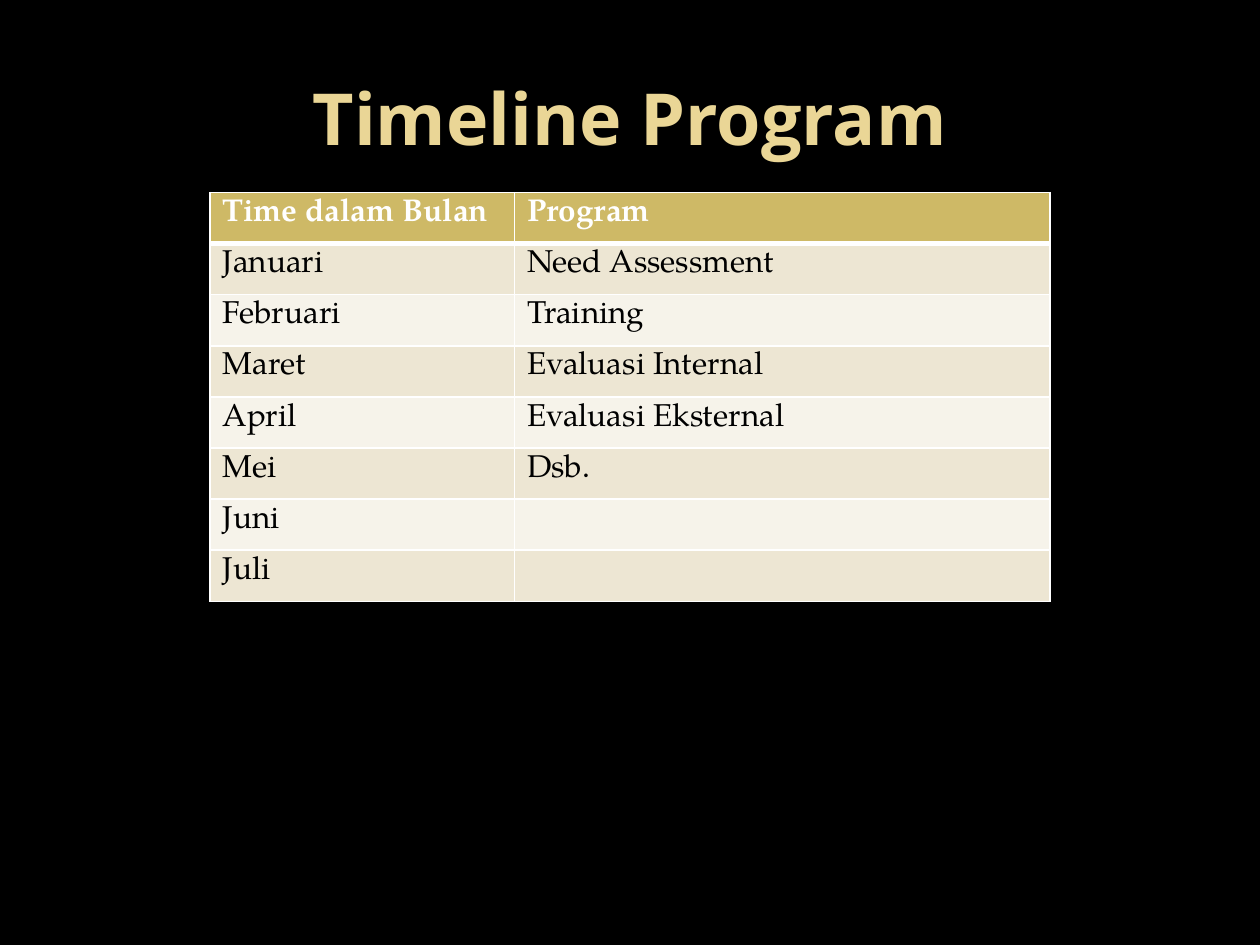
from lxml.etree import SubElement
from pptx import Presentation
from pptx.dml.color import RGBColor
from pptx.enum.text import MSO_ANCHOR as Anchor, PP_ALIGN as Align
from pptx.oxml.ns import qn
from pptx.util import Pt

COLORS = {
    "background": "000000",
    "title": "EAD696",
    "header": "CEB966",
    "odd_row": "EDE6D3",
    "even_row": "F6F3EA",
    "border": "FFFFFF",
    "header_text": "FFFFFF",
    "body_text": "000000",
}
TITLE_FONT = "Open Sans"
TABLE_FONT = "TeX Gyre Pagella"
COLUMN_WIDTHS = (174, 306)
SCHEDULE = (
    ("Time dalam Bulan", "Program"),
    ("Januari", "Need Assessment"),
    ("Februari", "Training"),
    ("Maret", "Evaluasi Internal"),
    ("April", "Evaluasi Eksternal"),
    ("Mei", "Dsb."),
    ("Juni", ""),
    ("Juli", ""),
)


def color(name):
    return RGBColor.from_string(COLORS[name])


def add_run(paragraph, text, font, size, color_name, bold=False):
    run = paragraph.add_run()
    run.text = text
    run.font.name = font
    run.font.size = Pt(size)
    run.font.bold = bold
    run.font.color.rgb = color(color_name)


def set_borders(cell, top, bottom):
    properties = cell._tc.get_or_add_tcPr()
    for side, width in (("L", 1), ("R", 1), ("T", top), ("B", bottom)):
        line = SubElement(properties, qn(f"a:ln{side}"), w=str(Pt(width)))
        fill = SubElement(line, qn("a:solidFill"))
        SubElement(fill, qn("a:srgbClr"), val=COLORS["border"])


def add_title(slide, left, top, width, height):
    shape = slide.shapes.add_textbox(Pt(left), Pt(top), Pt(width), Pt(height))
    frame = shape.text_frame
    frame.word_wrap = True
    frame.vertical_anchor = Anchor.MIDDLE
    paragraph = frame.paragraphs[0]
    paragraph.alignment = Align.CENTER
    add_run(paragraph, "Timeline Program", TITLE_FONT, 41, "title", True)


def add_schedule(slide, left, top, width, height):
    shape = slide.shapes.add_table(
        len(SCHEDULE), len(COLUMN_WIDTHS), Pt(left), Pt(top), Pt(width), Pt(height)
    )
    table = shape.table
    for column, column_width in zip(table.columns, COLUMN_WIDTHS):
        column.width = Pt(column_width)
    for row_index, texts in enumerate(SCHEDULE):
        is_header = row_index == 0
        if is_header:
            fill_name = "header"
        else:
            fill_name = "odd_row" if row_index % 2 else "even_row"
        text_name = "header_text" if is_header else "body_text"
        for column_index, text in enumerate(texts):
            cell = table.cell(row_index, column_index)
            set_borders(cell, 3 if row_index == 1 else 1, 3 if is_header else 1)
            cell.fill.solid()
            cell.fill.fore_color.rgb = color(fill_name)
            if text:
                paragraph = cell.text_frame.paragraphs[0]
                add_run(paragraph, text, TABLE_FONT, 18, text_name, is_header)


def main():
    presentation = Presentation()
    presentation.slide_width = Pt(720)
    presentation.slide_height = Pt(540)
    slide = presentation.slides.add_slide(presentation.slide_layouts[6])
    slide.background.fill.solid()
    slide.background.fill.fore_color.rgb = color("background")
    add_title(slide, 36, 21.6, 648, 90)
    add_schedule(slide, 120, 110, sum(COLUMN_WIDTHS), 233.6)
    presentation.save("out.pptx")


if __name__ == "__main__":
    main()
